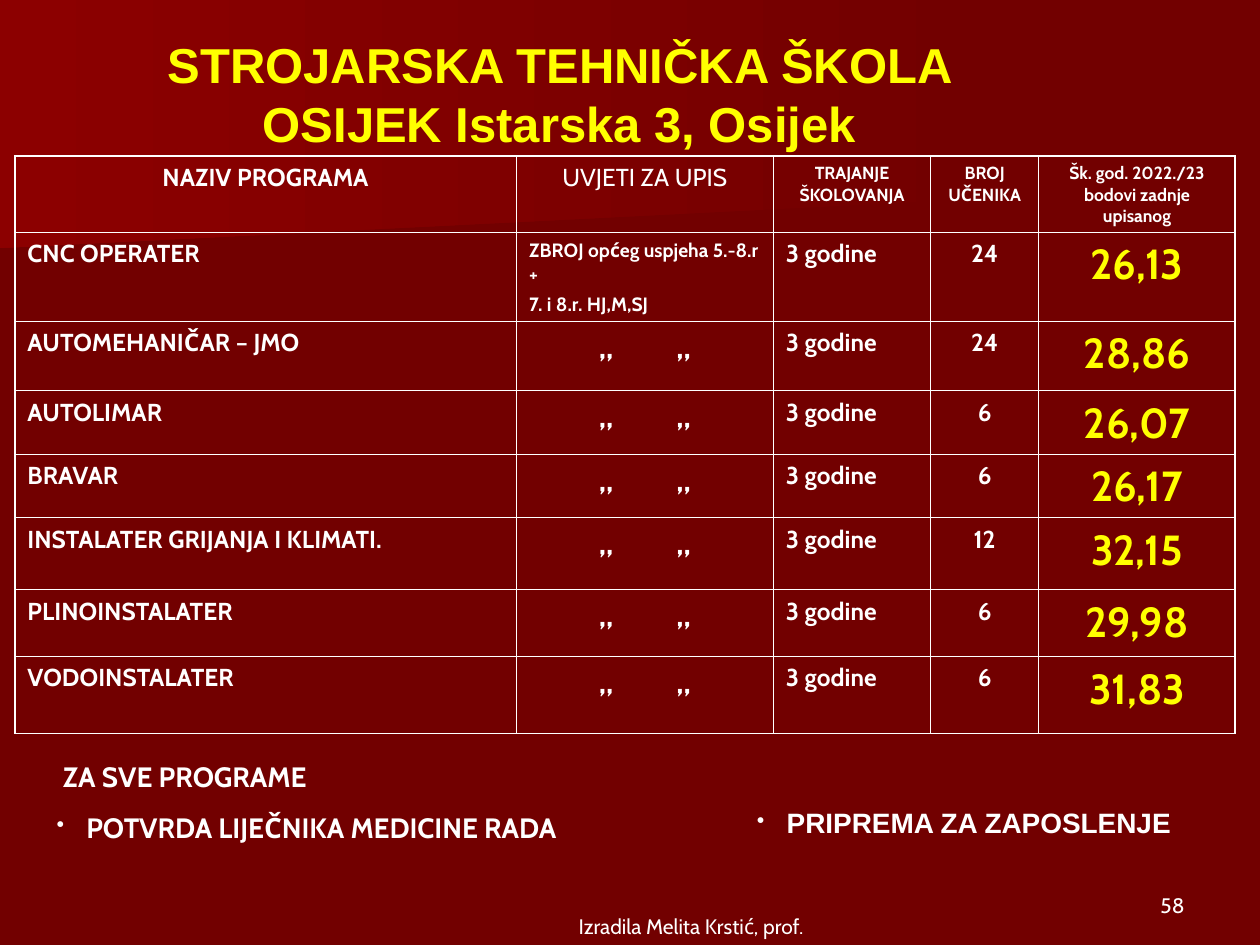
from dataclasses import dataclass

from lxml.etree import SubElement
from pptx import Presentation
from pptx.dml.color import RGBColor as Rgb
from pptx.enum.text import MSO_ANCHOR as Anchor, PP_ALIGN as Align
from pptx.oxml.ns import qn
from pptx.util import Cm, Pt


@dataclass(frozen=True)
class Theme:
    background: str = "720000"
    glow: str = "8C0000"
    shade: str = "6B0000"
    white: str = "FFFFFF"
    yellow: str = "FFFF00"
    body_font: str = "Cabin"
    heading_font: str = "Arial"
    title: int = 28
    score: int = 24
    ditto: int = 18
    note: int = 16
    cell: int = 14
    footer: int = 12
    condition: int = 11
    small_header: int = 10
    thin: float = 0.45
    thick: float = 1.08


THEME = Theme()
COLUMN_WIDTHS = [10.11, 5.18, 3.17, 2.18, 3.96]
ROW_HEIGHTS = [1.52, 1.75, 1.4, 1.19, 1.19, 1.45, 1.35, 1.55]
HEADERS = [
    ("NAZIV PROGRAMA", THEME.cell, True),
    ("UVJETI ZA UPIS", THEME.cell, False),
    ("TRAJANJE ŠKOLOVANJA", THEME.small_header, True),
    ("BROJ UČENIKA", THEME.small_header, True),
    ("Šk. god. 2022./23 bodovi zadnje upisanog", THEME.small_header, True),
]
CONDITIONS = ["ZBROJ općeg uspjeha 5.-8.r +", "7. i 8.r. HJ,M,SJ"]
DITTO = "\t„\t„"
DITTO_STOPS = [1.41, 2.97]
DURATION = "3 godine"
PROGRAMMES = [
    ("CNC OPERATER", "24", "26,13"),
    ("AUTOMEHANIČAR – JMO", "24", "28,86"),
    ("AUTOLIMAR", "6", "26,07"),
    ("BRAVAR", "6", "26,17"),
    ("INSTALATER GRIJANJA I KLIMATI.", "12", "32,15"),
    ("PLINOINSTALATER", "6", "29,98"),
    ("VODOINSTALATER", "6", "31,83"),
]


def write_text(frame, text, *, size=THEME.cell, font=THEME.body_font,
               color=THEME.white, bold=False, align=Align.LEFT,
               before=0, spacing=None, indent=0, bullet=None, stops=()):
    paragraph = frame.paragraphs[0]
    if paragraph.runs:
        paragraph = frame.add_paragraph()
    paragraph.alignment = align
    paragraph.space_before = Pt(before)
    if spacing:
        paragraph.line_spacing = spacing
    properties = paragraph._p.get_or_add_pPr()
    properties.set("marL", str(Cm(indent)))
    if bullet:
        properties.set("indent", str(-Cm(indent)))
        bullet_color = SubElement(properties, qn("a:buClr"))
        SubElement(bullet_color, qn("a:srgbClr"), val=color)
        SubElement(properties, qn("a:buSzPct"), val="80000")
        SubElement(properties, qn("a:buChar"), char=bullet)
    if stops:
        tabs = SubElement(properties, qn("a:tabLst"))
        for stop in stops:
            SubElement(tabs, qn("a:tab"), pos=str(Cm(stop)), algn="l")
    run = paragraph.add_run()
    run.text = text
    run.font.size = Pt(size)
    run.font.name = font
    run.font.bold = bold
    run.font.color.rgb = Rgb.from_string(color)


def add_text_frame(slide, left, top, width, height, anchor=Anchor.TOP):
    box = slide.shapes.add_textbox(Cm(left), Cm(top), Cm(width), Cm(height))
    frame = box.text_frame
    frame.word_wrap = True
    frame.vertical_anchor = anchor
    return frame


def add_beam(slide, corners, right_color, left_color):
    outline = slide.shapes.build_freeform(*corners[0], scale=Cm(1))
    outline.add_line_segments(corners[1:], close=True)
    beam = outline.convert_to_shape()
    beam.shadow.inherit = False
    beam.line.fill.background()
    beam.fill.gradient()
    beam.fill.gradient_angle = 180
    for stop, color in zip(beam.fill.gradient_stops, (right_color, left_color)):
        stop.color.rgb = Rgb.from_string(color)


def draw_borders(cell, row, column):
    outer = {"L": column == 0, "R": column == len(COLUMN_WIDTHS) - 1,
             "T": row == 0, "B": False}
    properties = cell._tc.get_or_add_tcPr()
    for side, is_outer in outer.items():
        width = THEME.thick if is_outer else THEME.thin
        border = SubElement(properties, qn(f"a:ln{side}"), w=str(Pt(width)))
        fill = SubElement(border, qn("a:solidFill"))
        SubElement(fill, qn("a:srgbClr"), val=THEME.white)


def write_cell(cell, text, **style):
    write_text(cell.text_frame, text, before=3.5, spacing=1.01, **style)


def add_programme_table(slide):
    table = slide.shapes.add_table(
        len(ROW_HEIGHTS), len(COLUMN_WIDTHS), Cm(0.3), Cm(3.15),
        Cm(sum(COLUMN_WIDTHS)), Cm(sum(ROW_HEIGHTS))).table
    table.first_row = table.horz_banding = False
    for column, width in zip(table.columns, COLUMN_WIDTHS):
        column.width = Cm(width)
    for row, height in zip(table.rows, ROW_HEIGHTS):
        row.height = Cm(height)
    for r, row in enumerate(table.rows):
        for c, cell in enumerate(row.cells):
            draw_borders(cell, r, c)
            cell.fill.background()

    for c, (header, size, bold) in enumerate(HEADERS):
        write_cell(table.cell(0, c), header, size=size, bold=bold,
                   align=Align.CENTER)
    for r, (programme, pupils, score) in enumerate(PROGRAMMES, start=1):
        write_cell(table.cell(r, 0), programme, bold=True)
        if r > 1:
            write_cell(table.cell(r, 1), DITTO, size=THEME.ditto, bold=True,
                       stops=DITTO_STOPS)
        write_cell(table.cell(r, 2), DURATION, bold=True)
        write_cell(table.cell(r, 3), pupils, bold=True, align=Align.CENTER)
        write_cell(table.cell(r, 4), score, size=THEME.score, bold=True,
                   color=THEME.yellow, align=Align.CENTER)
    for condition in CONDITIONS:
        write_cell(table.cell(1, 1), condition, size=THEME.condition, bold=True)


def add_notes_below(slide):
    note = dict(size=THEME.note, bold=True, before=10)
    bulleted = dict(note, bullet="•", indent=0.6)
    outcome = add_text_frame(slide, 15.01, 15.09, 10.21, 1.96, Anchor.BOTTOM)
    write_text(outcome, "PRIPREMA ZA ZAPOSLENJE",
               font=THEME.heading_font, **bulleted)
    requirements = add_text_frame(slide, 0.89, 15.19, 13.84, 1.98)
    write_text(requirements, "ZA SVE PROGRAME", indent=0.13, **note)
    write_text(requirements, "POTVRDA LIJEČNIKA MEDICINE RADA", **bulleted)


def main():
    deck = Presentation()
    deck.slide_width, deck.slide_height = Cm(25.4), Cm(19.05)
    slide = deck.slides.add_slide(deck.slide_layouts[6])
    slide.background.fill.solid()
    slide.background.fill.fore_color.rgb = Rgb.from_string(THEME.background)

    add_beam(slide, [(19.76, 3.89), (0, 5.49), (0, 2.57), (19.79, 2.57)],
             THEME.background, THEME.shade)
    add_beam(slide, [(20.09, 4.11), (0, 5.28), (0, 0), (20.12, 0)],
             THEME.background, THEME.glow)

    page_number = add_text_frame(slide, 18.21, 17.35, 5.92, 1.27, Anchor.BOTTOM)
    write_text(page_number, "58", size=THEME.footer, align=Align.RIGHT)
    title = add_text_frame(slide, 1.37, 0.81, 19.81, 2.16, Anchor.MIDDLE)
    write_text(title, "STROJARSKA TEHNIČKA ŠKOLA OSIJEK Istarska 3, Osijek",
               size=THEME.title, font=THEME.heading_font, color=THEME.yellow,
               bold=True, align=Align.CENTER)
    add_programme_table(slide)
    add_notes_below(slide)
    author = add_text_frame(slide, 9.91, 17.78, 8.05, 1.27, Anchor.BOTTOM)
    write_text(author, "Izradila Melita Krstić, prof.", size=THEME.footer,
               align=Align.CENTER)
    deck.save("out.pptx")


if __name__ == "__main__":
    main()
